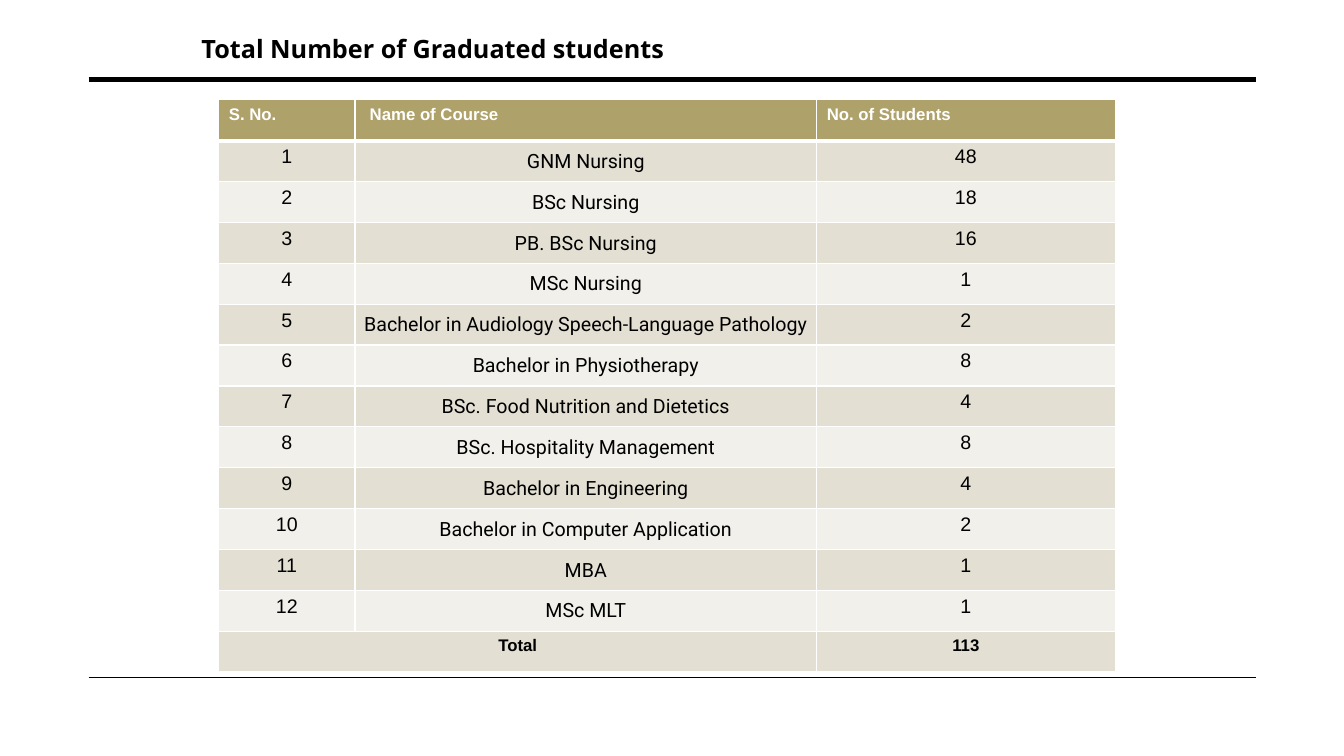
"""Build the slide listing graduated students by course."""
from lxml.etree import SubElement
from pptx import Presentation
from pptx.dml.color import RGBColor
from pptx.enum.shapes import MSO_CONNECTOR as Connector
from pptx.enum.text import MSO_ANCHOR as Anchor, MSO_AUTO_SIZE as AutoSize, PP_ALIGN as Align
from pptx.oxml.ns import qn
from pptx.util import Inches, Pt


def color(hex_text):
    return RGBColor.from_string(hex_text)


def write(para, text, size, font, tint, bold):
    span = para.add_run()
    span.text = text
    settings = {"size": Pt(size), "name": font, "bold": bold}
    for name, value in settings.items():
        setattr(span.font, name, value)
    span.font.color.rgb = color(tint)


deck = Presentation()
deck.slide_width = Inches(13.33)
deck.slide_height = Inches(7.5)
page = deck.slides.add_slide(deck.slide_layouts[6])

for top, weight in [(0.79, 3.5), (6.72, 1)]:
    rule = page.shapes.add_connector(
        Connector.STRAIGHT, Inches(0.88), Inches(top), Inches(12.46), Inches(top))
    rule.line.color.rgb = color("000000")
    rule.line.width = Pt(weight)
    SubElement(rule._element.spPr, qn("a:effectLst"))

courses = [
    ("GNM Nursing", 48),
    ("BSc Nursing", 18),
    ("PB. BSc Nursing", 16),
    ("MSc Nursing", 1),
    ("Bachelor in Audiology Speech-Language Pathology", 2),
    ("Bachelor in Physiotherapy", 8),
    ("BSc. Food Nutrition and Dietetics", 4),
    ("BSc. Hospitality Management", 8),
    ("Bachelor in Engineering", 4),
    ("Bachelor in Computer Application", 2),
    ("MBA", 1),
    ("MSc MLT", 1),
]
rows = [("S. No.", " Name of Course", "No. of Students")]
rows += [(number, *course) for number, course in enumerate(courses, 1)]
rows.append(("Total", "", sum(count for _, count in courses)))
last = len(rows) - 1

table = page.shapes.add_table(
    len(rows), 3, Inches(2.17), Inches(0.99), Inches(8.89), Inches(5.68)).table
table.horz_banding = False
for column, width in zip(table.columns, [1.35, 4.58, 2.96]):
    column.width = Inches(width)
for row in table.rows:
    row.height = Inches(5.68 / len(rows))
table.cell(last, 0).merge(table.cell(last, 1))

for row_index, values in enumerate(rows):
    header = row_index == 0
    course_row = 0 < row_index < last
    band = "AEA16A" if header else "E3DFD3" if row_index % 2 else "F1F0EA"
    for column_index, value in enumerate(values):
        cell = table.cell(row_index, column_index)
        course_name = course_row and column_index == 1
        properties = cell._tc.get_or_add_tcPr()
        for side in ["L", "R", "T", "B"]:
            thick = (header and side == "B") or (row_index == 1 and side == "T")
            border = SubElement(properties, qn(f"a:ln{side}"), w=str(Pt(3 if thick else 1)))
            paint = SubElement(border, qn("a:solidFill"))
            SubElement(paint, qn("a:srgbClr"), val="FFFFFF")
        cell.fill.solid()
        cell.fill.fore_color.rgb = color(band)
        if course_name:
            cell.vertical_anchor = Anchor.MIDDLE
        margins = (0.01, 0.01, 0.01, 0) if course_name else (0.1, 0.05, 0.1, 0.05)
        for side, margin in zip(["left", "top", "right", "bottom"], margins):
            setattr(cell, f"margin_{side}", Inches(margin))
        if value == "":
            continue
        para = cell.text_frame.paragraphs[0]
        para.alignment = Align.LEFT if header else Align.CENTER
        write(para, str(value), 14 if course_row else 12,
              "Roboto" if course_name else "Arial",
              "FFFFFF" if header else "000000", not course_row)

title = page.shapes.add_textbox(Inches(1.9), Inches(0.28), Inches(6.67), Inches(0.4))
title.text_frame.word_wrap = True
title.text_frame.auto_size = AutoSize.SHAPE_TO_FIT_TEXT
write(title.text_frame.paragraphs[0], "Total Number of Graduated students",
      18, "Open Sans", "000000", True)

deck.save("out.pptx")
